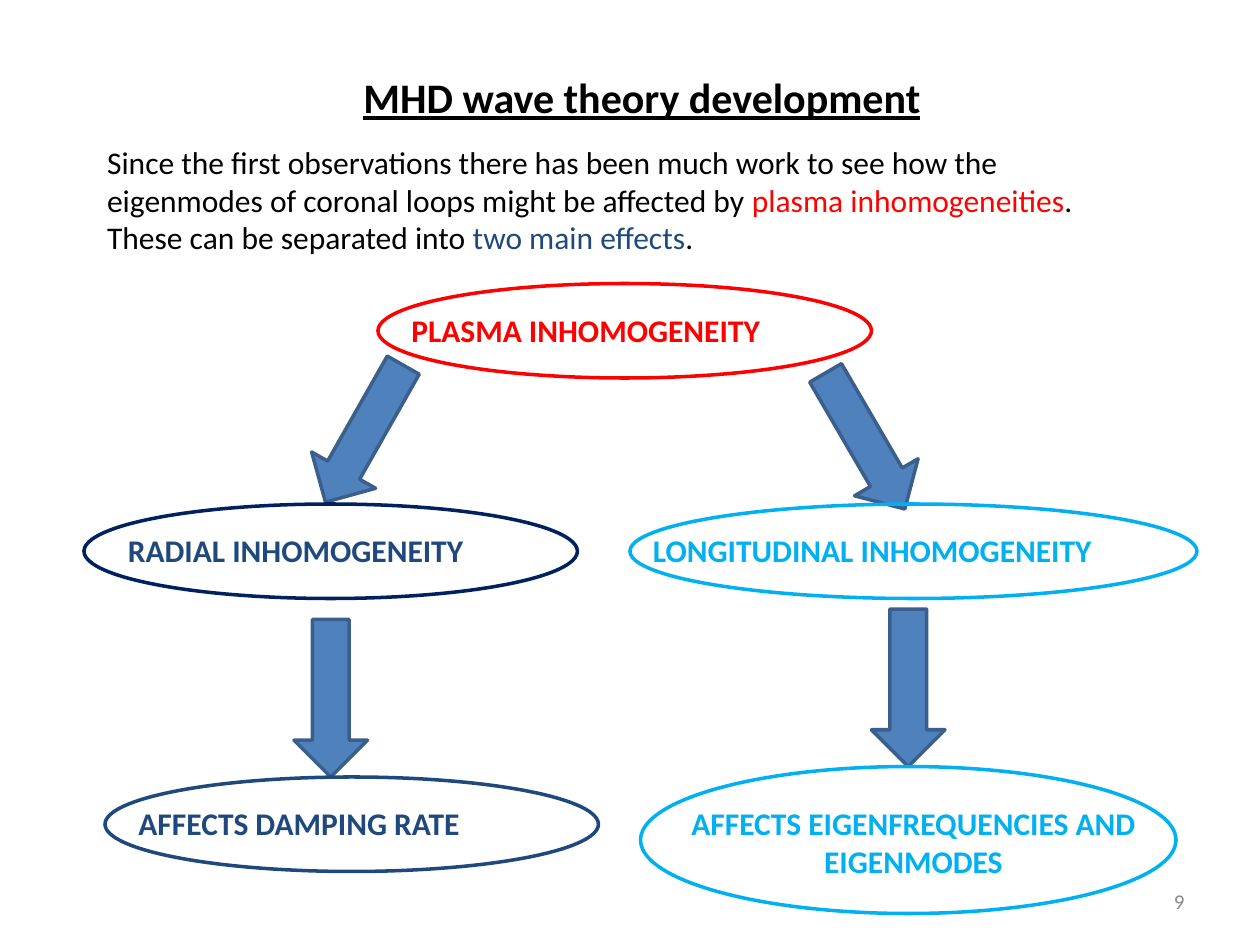
from pptx import Presentation
from pptx import util as u
from pptx.dml.color import RGBColor
from pptx.enum import shapes, text
from pptx.oxml.ns import qn

PX = 7620  # EMU per px, 120 px to the inch

BLACK = RGBColor(0x00, 0x00, 0x00)
RED = RGBColor(0xFF, 0x00, 0x00)
BLUE = RGBColor(0x1F, 0x49, 0x7D)
NAVY = RGBColor(0x00, 0x20, 0x60)
SKY = RGBColor(0x00, 0xB0, 0xF0)
GREY = RGBColor(0x89, 0x89, 0x89)
ARROW_FILL = RGBColor(0x4F, 0x81, 0xBD)
ARROW_LINE = RGBColor(0x3A, 0x5F, 0x8C)


def px(*lengths):
    return [u.Emu(length * PX) for length in lengths]


def format_text(shape, size, color, bold=False, align=text.PP_ALIGN.LEFT):
    frame = shape.text_frame
    frame.word_wrap = True
    frame.auto_size = text.MSO_AUTO_SIZE.NONE
    paragraph = frame.paragraphs[0]
    paragraph.alignment = align
    paragraph.space_before = u.Pt(0)
    paragraph.font.name = "Calibri"
    paragraph.font.size = u.Pt(size)
    paragraph.font.bold = bold
    paragraph.font.color.rgb = color
    return paragraph


presentation = Presentation()
presentation.slide_width, presentation.slide_height = px(1200, 900)
slide = presentation.slides.add_slide(presentation.slide_layouts[1])

# Title and introduction
title, body = slide.placeholders
title.left, title.top, title.width, title.height = px(260, 62, 703, 61)
title.text_frame.text = "MHD wave theory development"
paragraph = format_text(title, 24, BLACK, True, text.PP_ALIGN.CENTER)
paragraph.font.underline = True

body.left, body.top, body.width, body.height = px(90, 130, 1010, 121)
paragraph = body.text_frame.paragraphs[0]
properties = paragraph._p.get_or_add_pPr()
properties.set("marL", "0")
properties.set("indent", "0")
properties.append(properties.makeelement(qn("a:buNone"), {}))
format_text(body, 18, BLACK)
for words, color in [
    ("Since the first observations there has been much work to see how the "
     "eigenmodes of coronal loops might be affected by ", BLACK),
    ("plasma inhomogeneities", RED),
    (". These can be separated into ", BLACK),
    ("two main effects", BLUE),
    (".", BLACK),
]:
    run = paragraph.add_run()
    run.text = words
    run.font.color.rgb = color

# Arrows: left, top, rotation
for left, top, rotation in [
    (240, 630, 90), (790, 620, 90), (272, 378, 119.6), (749, 385, 59.8),
]:
    arrow = slide.shapes.add_shape(
        shapes.MSO_SHAPE.RIGHT_ARROW, *px(left, top, 150, 70))
    arrow.rotation = rotation
    arrow.shadow.inherit = False
    arrow.fill.solid()
    arrow.fill.fore_color.rgb = ARROW_FILL
    arrow.line.color.rgb = ARROW_LINE
    arrow.line.width = u.Pt(2)

# Ellipses with their labels: ellipse box, outline, label box, label colour
LEFT, CENTER = text.PP_ALIGN.LEFT, text.PP_ALIGN.CENTER
for words, ellipse_box, outline, label_box, color, align in [
    ("PLASMA INHOMOGENEITY",
     (360, 270, 470, 90), RED, (380, 290, 470, 48), RED, LEFT),
    ("RADIAL INHOMOGENEITY",
     (80, 480, 470, 90), NAVY, (110, 500, 410, 48), BLUE, LEFT),
    ("LONGITUDINAL INHOMOGENEITY",
     (600, 480, 540, 90), SKY, (610, 500, 550, 48), SKY, LEFT),
    ("AFFECTS DAMPING RATE",
     (100, 740, 470, 90), BLUE, (120, 760, 460, 48), BLUE, LEFT),
    ("AFFECTS EIGENFREQUENCIES AND EIGENMODES",
     (610, 730, 510, 140), SKY, (600, 760, 540, 85), SKY, CENTER),
]:
    ellipse = slide.shapes.add_shape(shapes.MSO_SHAPE.OVAL, *px(*ellipse_box))
    ellipse.shadow.inherit = False
    ellipse.fill.background()
    ellipse.line.color.rgb = outline
    ellipse.line.width = u.Pt(2)
    label = slide.shapes.add_textbox(*px(*label_box))
    label.text_frame.text = words
    format_text(label, 18, color, True, align)

# Page number
page_number = slide.shapes.add_textbox(*px(860, 834, 280, 48))
page_number.text_frame.text = "9"
page_number.text_frame.vertical_anchor = text.MSO_ANCHOR.MIDDLE
format_text(page_number, 12, GREY, align=text.PP_ALIGN.RIGHT)

presentation.save("out.pptx")
